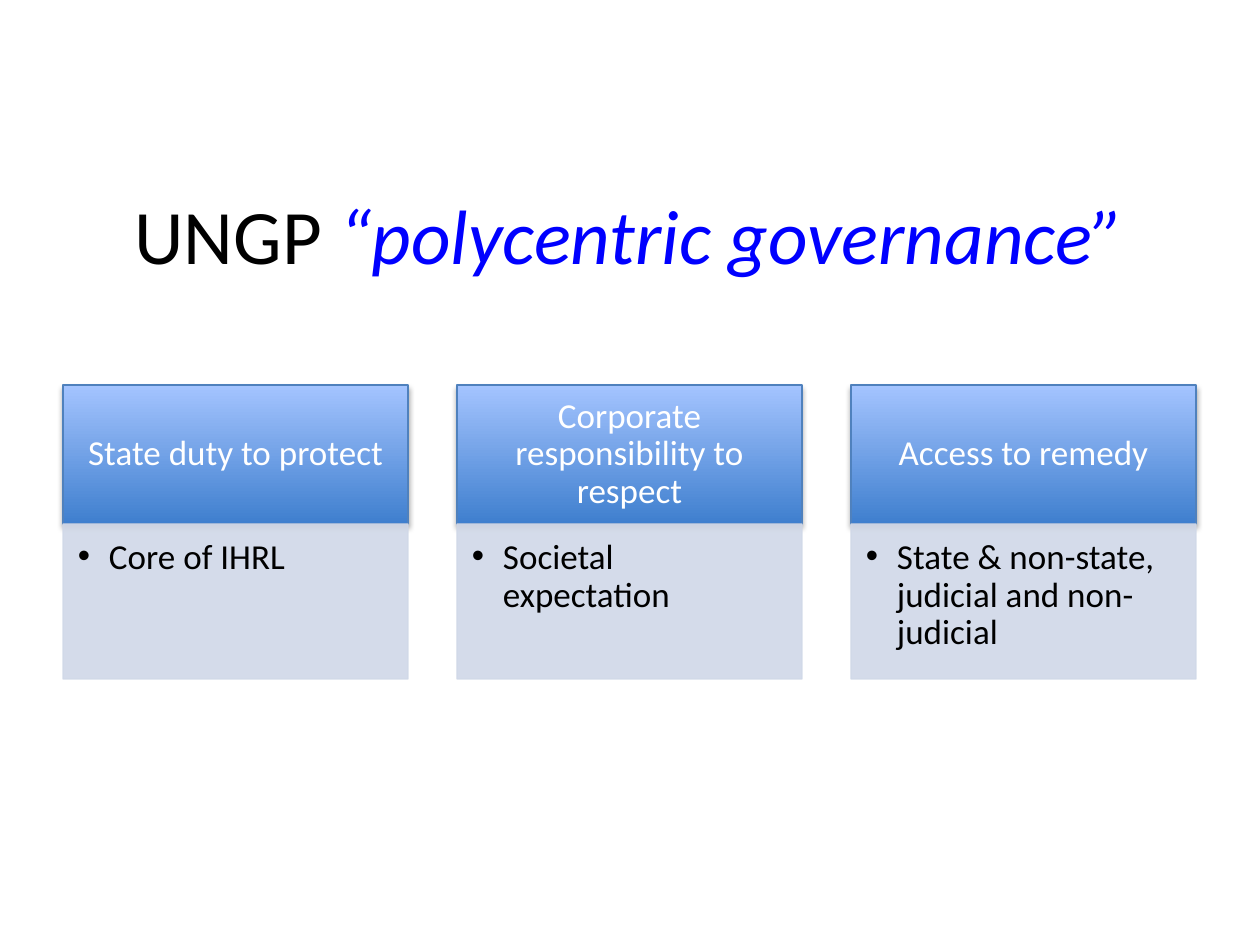
from dataclasses import dataclass

from lxml.etree import SubElement
from pptx import Presentation
from pptx.dml.color import RGBColor
from pptx.enum.shapes import MSO_SHAPE
from pptx.enum.text import MSO_ANCHOR, PP_ALIGN
from pptx.oxml.ns import qn
from pptx.util import Emu, Pt

EMU_PER_PX = 914400 // 126


@dataclass(frozen=True)
class Theme:
    font: str = "Calibri"
    title_size: int = 44
    text_size: int = 20
    line_width: float = 0.75
    ink: str = "000000"
    accent: str = "0000FF"
    header_text: str = "FFFFFF"
    header_bottom: str = "3F7FCE"
    header_top: str = "A4C4FF"
    header_line: str = "4F81BD"
    panel: str = "D0D8E8"


THEME = Theme()

PILLARS = [
    ("State duty to protect", "Core of IHRL"),
    ("Corporate responsibility to respect", "Societal expectation"),
    ("Access to remedy", "State & non-state, judicial and non-judicial"),
]
LEFT, PITCH, WIDTH = 63, 394, 345
HEADER_TOP, HEADER_HEIGHT, PANEL_HEIGHT = 385, 139, 155


def px(length):
    return Emu(length * EMU_PER_PX)


def rgb(value):
    return RGBColor.from_string(value)


def add_span(para, text, size, color, italic=None):
    span = para.add_run()
    span.text = text
    span.font.name = THEME.font
    span.font.size = Pt(size)
    span.font.color.rgb = rgb(color)
    span.font.italic = italic


def add_box(page, left, top, height, line_color, anchor, insets):
    """Add a column-wide rectangle with the given left, top, right, bottom insets."""
    box = page.shapes.add_shape(
        MSO_SHAPE.RECTANGLE, px(left), px(top), px(WIDTH), px(height)
    )
    box.shadow.inherit = False
    box.line.color.rgb = rgb(line_color)
    box.line.width = Pt(THEME.line_width)
    frame = box.text_frame
    frame.word_wrap = True
    frame.vertical_anchor = anchor
    (frame.margin_left, frame.margin_top,
     frame.margin_right, frame.margin_bottom) = map(px, insets)
    frame.paragraphs[0].line_spacing = 0.9
    return box


def add_soft_shadow(box):
    effects = box.element.spPr.find(qn("a:effectLst"))
    shadow = SubElement(
        effects, qn("a:outerShdw"), blurRad=str(Pt(3.1)), dist=str(Pt(1.8)),
        dir="5400000", rotWithShape="0",
    )
    color = SubElement(shadow, qn("a:srgbClr"), val=THEME.ink)
    SubElement(color, qn("a:alpha"), val="35000")


def add_header(page, left, text):
    box = add_box(page, left, HEADER_TOP, HEADER_HEIGHT, THEME.header_line,
                  MSO_ANCHOR.MIDDLE, (20, 11, 20, 11))
    box.fill.gradient()
    box.fill.gradient_angle = 90
    for stop, color in zip(box.fill.gradient_stops,
                           (THEME.header_bottom, THEME.header_top)):
        stop.color.rgb = rgb(color)
    add_soft_shadow(box)
    para = box.text_frame.paragraphs[0]
    para.alignment = PP_ALIGN.CENTER
    add_span(para, text, THEME.text_size, THEME.header_text)


def add_bullet(para, indent):
    properties = para._p.get_or_add_pPr()
    properties.set("marL", str(px(indent)))
    properties.set("indent", str(-px(indent)))
    SubElement(properties, qn("a:buFont"), typeface="Arial")
    SubElement(properties, qn("a:buChar"), char="•")


def add_panel(page, left, text):
    box = add_box(page, left, HEADER_TOP + HEADER_HEIGHT, PANEL_HEIGHT, THEME.panel,
                  MSO_ANCHOR.TOP, (15, 15, 20, 21))
    box.fill.solid()
    box.fill.fore_color.rgb = rgb(THEME.panel)
    for color in box.element.spPr.iter(qn("a:srgbClr")):
        SubElement(color, qn("a:alpha"), val="90000")
    para = box.text_frame.paragraphs[0]
    para.alignment = PP_ALIGN.LEFT
    add_bullet(para, 31)
    add_span(para, text, THEME.text_size, THEME.ink)


def fill_title(page):
    title = page.shapes.title
    title.left, title.top, title.width, title.height = map(px, (63, 135, 1134, 198))
    title.text_frame.vertical_anchor = MSO_ANCHOR.MIDDLE
    para = title.text_frame.paragraphs[0]
    para.alignment = PP_ALIGN.CENTER
    add_span(para, "UNGP ", THEME.title_size, THEME.ink)
    add_span(para, "“polycentric governance”", THEME.title_size, THEME.accent, italic=True)


def main():
    deck = Presentation()
    deck.slide_width, deck.slide_height = px(1260), px(945)
    page = deck.slides.add_slide(deck.slide_layouts.get_by_name("Title Only"))
    fill_title(page)
    for column, (heading, point) in enumerate(PILLARS):
        left = LEFT + column * PITCH
        add_header(page, left, heading)
        add_panel(page, left, point)
    deck.save("out.pptx")


if __name__ == "__main__":
    main()
